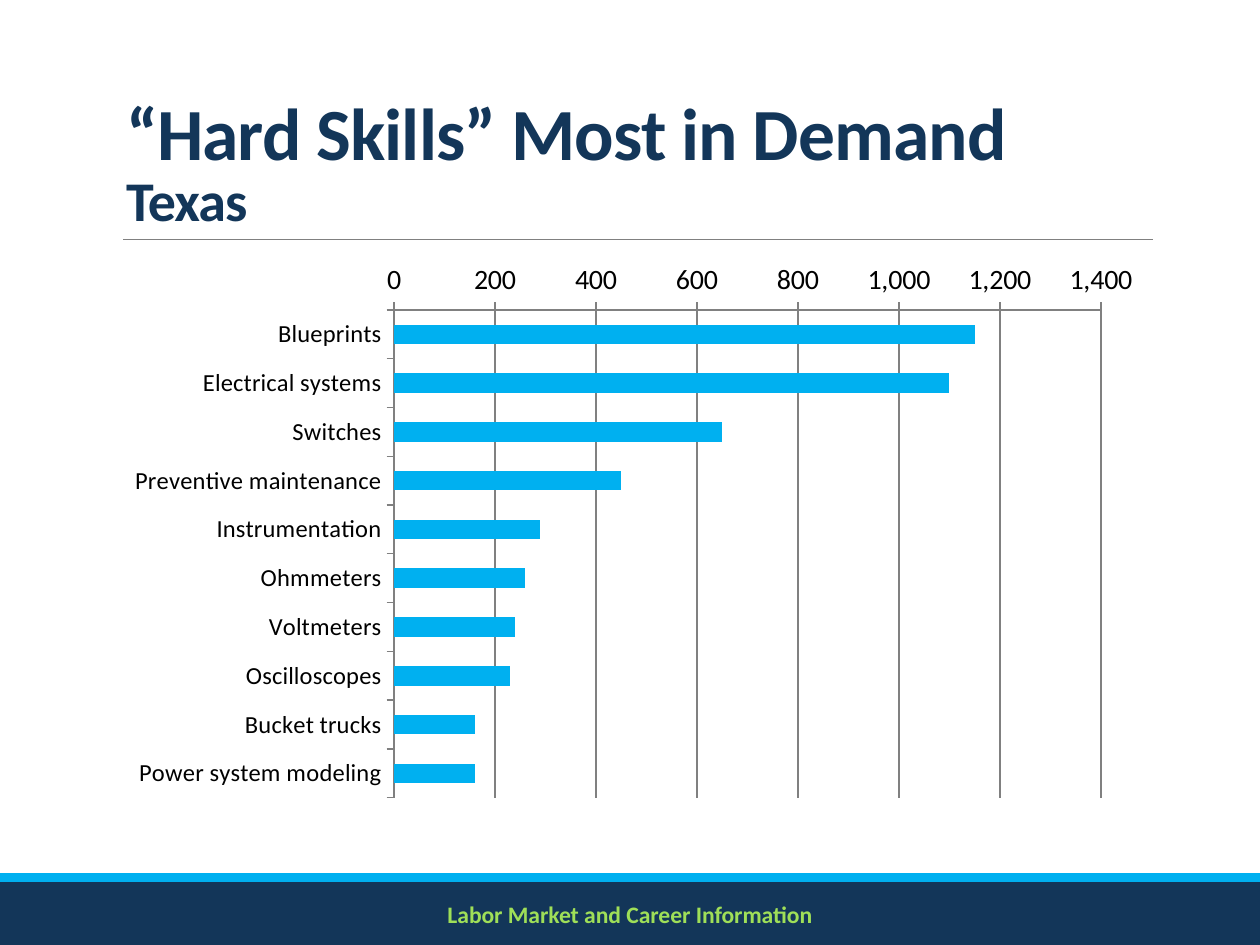
import lxml.etree
import pptx
import pptx.chart.data
import pptx.dml.color
import pptx.enum.chart
import pptx.enum.shapes
import pptx.enum.text
import pptx.oxml
import pptx.oxml.ns
import pptx.util
from pptx.util import Inches

NAVY = "133659"
SKY = "00B0F0"
GREEN = "9FDF58"
GRAY = "808080"
BLACK = "000000"


def color(value):
    return pptx.dml.color.RGBColor.from_string(value)


def add_span(para, text, size, fill):
    span = para.add_run()
    span.text = text
    span.font.name = "Calibri"
    span.font.size = pptx.util.Pt(size)
    span.font.bold = True
    span.font.color.rgb = color(fill)
    return span


deck = pptx.Presentation()
deck.slide_width = Inches(10)
deck.slide_height = Inches(7.5)
page = deck.slides.add_slide(deck.slide_layouts[5])

for top, height, fill in [(7, 0.5, NAVY), (6.93, 0.07, SKY)]:
    band = page.shapes.add_shape(
        pptx.enum.shapes.MSO_SHAPE.RECTANGLE,
        Inches(0), Inches(top), Inches(10), Inches(height))
    band.shadow.inherit = False
    band.fill.solid()
    band.fill.fore_color.rgb = color(fill)
    band.line.fill.background()

rule = page.shapes.add_connector(
    pptx.enum.shapes.MSO_CONNECTOR.STRAIGHT,
    Inches(0.98), Inches(1.9), Inches(9.15), Inches(1.9))
rule.line.color.rgb = color(GRAY)
rule.line.width = pptx.util.Pt(0.5)
lxml.etree.SubElement(rule._element.spPr, pptx.oxml.ns.qn("a:effectLst"))

footer = page.shapes.add_textbox(Inches(0), Inches(7.08), Inches(10), Inches(0.35))
footer.text_frame.word_wrap = True
footer.text_frame.vertical_anchor = pptx.enum.text.MSO_ANCHOR.MIDDLE
para = footer.text_frame.paragraphs[0]
para.alignment = pptx.enum.text.PP_ALIGN.CENTER
add_span(para, "Labor Market and Career Information", 13.5, GREEN)

title = page.shapes.title
title.left, title.top = Inches(0.9), Inches(0.31)
title.width, title.height = Inches(8.25), Inches(1.59)
title.text_frame.word_wrap = True
title.text_frame.auto_size = pptx.enum.text.MSO_AUTO_SIZE.NONE
title.text_frame.vertical_anchor = pptx.enum.text.MSO_ANCHOR.BOTTOM
para = title.text_frame.paragraphs[0]
para.alignment = pptx.enum.text.PP_ALIGN.LEFT
para.line_spacing = 0.85
heading = add_span(para, "“Hard Skills” Most in Demand", 42, NAVY)
para.add_line_break()
region = add_span(para, "Texas", 32, NAVY)
for span in (heading, region):
    span.font._element.set("spc", "-50")

skills = {
    "Blueprints": 1150,
    "Electrical systems": 1100,
    "Switches": 650,
    "Preventive maintenance": 450,
    "Instrumentation": 290,
    "Ohmmeters": 260,
    "Voltmeters": 240,
    "Oscilloscopes": 230,
    "Bucket trucks": 160,
    "Power system modeling": 160,
}
data = pptx.chart.data.CategoryChartData()
data.categories = list(skills)
data.add_series("Series 1", list(skills.values()))
chart = page.shapes.add_chart(
    pptx.enum.chart.XL_CHART_TYPE.BAR_CLUSTERED,
    Inches(0.9), Inches(2.02), Inches(8.25), Inches(4.4), data).chart
chart.has_legend = False
chart.has_title = False
chart.font.name = "Calibri"
chart.font.size = pptx.util.Pt(14)
chart.font.color.rgb = color(BLACK)

plot = chart.plots[0]
plot.gap_width = 150
plot.vary_by_categories = False
bars = plot.series[0].format
bars.fill.solid()
bars.fill.fore_color.rgb = color(SKY)

skill_axis = chart.category_axis
skill_axis.reverse_order = True
skill_axis.has_major_gridlines = False
count_axis = chart.value_axis
count_axis.minimum_scale = 0
count_axis.maximum_scale = 1400
count_axis.major_unit = 200
count_axis.has_major_gridlines = True
count_axis.tick_labels.number_format = "#,##0"
count_axis.tick_labels.number_format_is_linked = False
count_axis.tick_labels.font.size = pptx.util.Pt(16)
for axis in (skill_axis, count_axis):
    axis.major_tick_mark = pptx.enum.chart.XL_TICK_MARK.OUTSIDE
    axis.minor_tick_mark = pptx.enum.chart.XL_TICK_MARK.NONE
for part in (skill_axis, count_axis, count_axis.major_gridlines):
    part.format.line.color.rgb = color(GRAY)
    part.format.line.width = pptx.util.Pt(0.75)

plot_area = chart._chartSpace.chart.plotArea
for old_layout in plot_area.findall(pptx.oxml.ns.qn("c:layout")):
    plot_area.remove(old_layout)
plot_area.insert(0, pptx.oxml.parse_xml(
    f'<c:layout {pptx.oxml.ns.nsdecls("c")}><c:manualLayout>'
    '<c:layoutTarget val="inner"/><c:xMode val="edge"/><c:yMode val="edge"/>'
    '<c:x val="0.27"/><c:y val="0.1"/><c:w val="0.68"/><c:h val="0.88"/>'
    '</c:manualLayout></c:layout>'))

deck.save("out.pptx")
